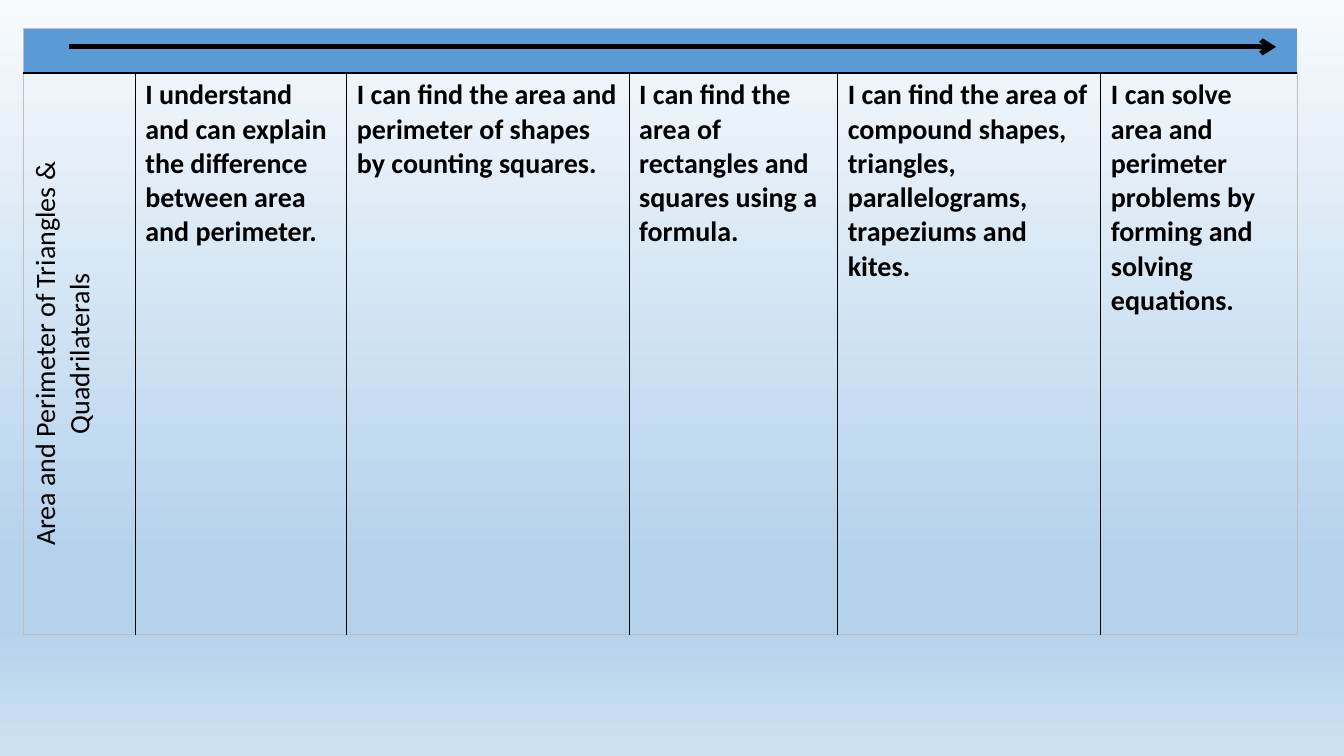
"""Build a learning-journey slide on area and perimeter."""
from lxml import etree
from pptx import Presentation
from pptx.dml.color import RGBColor
from pptx.enum import shapes, text
from pptx.oxml import ns
from pptx.util import Pt

INK = {"black": "000000", "blue": "5B9BD5", "grey": "BFBFBF",
       "top": "F7FAFD", "mid": "B5D2EC", "end": "CEE1F2"}
STOPS = [(0, "top"), (74, "mid"), (83, "mid"), (100, "end")]
TOPIC = "Area and Perimeter of Triangles & Quadrilaterals"
GOALS = [
    "I understand and can explain the difference between area and perimeter.",
    "I can find the area and perimeter of shapes by counting squares.",
    "I can find the area of rectangles and squares using a formula.",
    "I can find the area of compound shapes, triangles, parallelograms, trapeziums and kites.",
    "I can solve area and perimeter problems by forming and solving equations.",
]
WIDTHS = [80, 151.2, 201.6, 149, 188, 140.4]
HEIGHTS = [31.7, 344.2]


def add(parent, tag, **attrs):
    return etree.SubElement(parent, ns.qn(tag), attrs)


def edge(cell, side, color, width):
    props = cell._tc.get_or_add_tcPr()
    line = add(props, "a:ln" + side, w=str(Pt(width)))
    add(add(line, "a:solidFill"), "a:srgbClr", val=INK[color])
    props.insert("LRTB".index(side), line)


deck = Presentation()
deck.slide_width, deck.slide_height = Pt(960), Pt(540)
slide = deck.slides.add_slide(deck.slide_layouts[6])

back = slide.background.fill
back.gradient()
back.gradient_angle = 270
stops = slide.element.find(".//" + ns.qn("a:gsLst"))
for stop in list(stops):
    stops.remove(stop)
for pos, color in STOPS:
    add(add(stops, "a:gs", pos=str(pos * 1000)), "a:srgbClr", val=INK[color])

frame = slide.shapes.add_table(2, len(WIDTHS), Pt(16.6), Pt(20.5),
                               Pt(sum(WIDTHS)), Pt(sum(HEIGHTS)))
table = frame.table
table.first_row = table.horz_banding = False
style = table._tbl.tblPr.find(ns.qn("a:tableStyleId"))
style.text = "{2D5ABB26-0587-4C30-8999-92F81FD0307C}"
for col, width in zip(table.columns, WIDTHS):
    col.width = Pt(width)
for row, height in zip(table.rows, HEIGHTS):
    row.height = Pt(height)
table.cell(0, 0).merge(table.cell(0, len(WIDTHS) - 1))

last = len(WIDTHS) - 1
for col, words in enumerate([TOPIC] + GOALS):
    head, cell = table.cell(0, col), table.cell(1, col)
    head.fill.solid()
    head.fill.fore_color.rgb = RGBColor.from_string(INK["blue"])
    cell.fill.background()
    cell.text_frame.text = words
    font = cell.text_frame.paragraphs[0].runs[0].font
    font.name, font.size, font.bold = "Calibri", Pt(20), col > 0
    font.color.rgb = RGBColor.from_string(INK["black"])
    if col == 0:
        edge(head, "L", "grey", 0.5)
    if col == last:
        edge(head, "R", "grey", 0.5)
    edge(cell, "L", *(("black", 1) if col > 0 else ("grey", 0.5)))
    edge(cell, "R", *(("black", 1) if col < last else ("grey", 0.5)))
    edge(head, "T", "grey", 0.5)
    edge(head, "B", "black", 1.5)
    edge(cell, "T", "black", 1.5)
    edge(cell, "B", "grey", 0.5)

topic = table.cell(1, 0)
topic._tc.get_or_add_tcPr().set("vert", "vert270")
topic.text_frame.paragraphs[0].alignment = text.PP_ALIGN.CENTER

arrow = slide.shapes.add_connector(shapes.MSO_CONNECTOR.STRAIGHT,
                                   Pt(49.5), Pt(33.5), Pt(911.5), Pt(33.5))
arrow.line.color.rgb = RGBColor.from_string(INK["black"])
arrow.line.width = Pt(3.5)
add(arrow.line._get_or_add_ln(), "a:tailEnd", type="arrow")
add(arrow._element.spPr, "a:effectLst")

deck.save("out.pptx")
